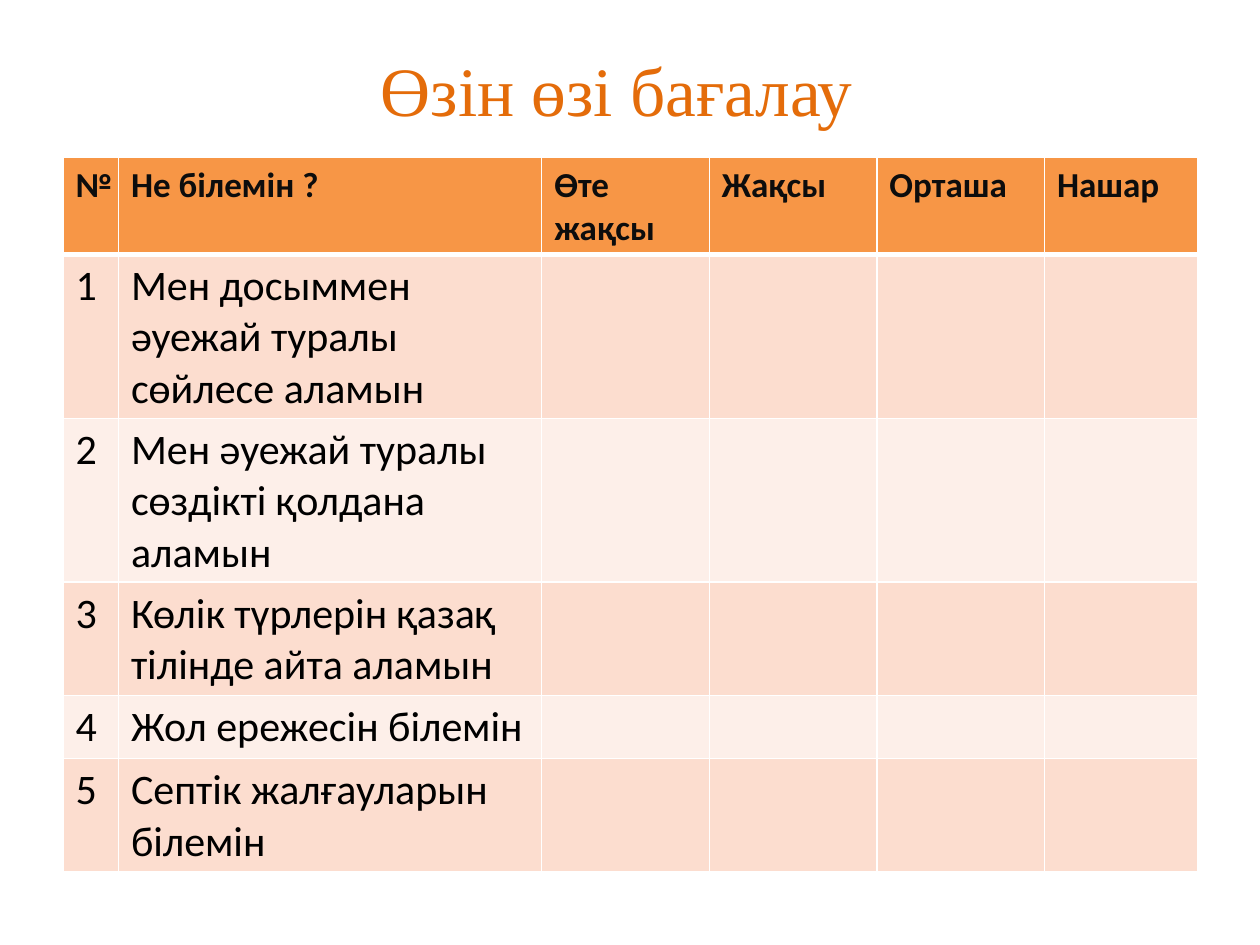
from pptx import Presentation
from pptx.dml.color import RGBColor
from pptx.enum.text import MSO_ANCHOR, PP_ALIGN
from pptx.oxml import parse_xml
from pptx.oxml.ns import nsdecls
from pptx.util import Inches, Pt


def add_run(paragraph, text, font, size, color, bold=False):
    run = paragraph.add_run()
    run.text = text
    run.font.name = font
    run.font.size = Pt(size)
    run.font.bold = bold
    run.font.color.rgb = RGBColor.from_string(color)


def add_border(cell, side, points, color="FFFFFF"):
    cell._tc.get_or_add_tcPr().append(parse_xml(
        f'<a:{side} {nsdecls("a")} w="{Pt(points)}"><a:solidFill>'
        f'<a:srgbClr val="{color}"/></a:solidFill></a:{side}>'))


presentation = Presentation()
presentation.slide_width = Inches(10)
presentation.slide_height = Inches(7.5)
slide = presentation.slides.add_slide(presentation.slide_layouts[6])

# Title
title = slide.shapes.add_textbox(Inches(1.02), Inches(0.31), Inches(7.75), Inches(0.79))
title.text_frame.word_wrap = True
title.text_frame.vertical_anchor = MSO_ANCHOR.MIDDLE
paragraph = title.text_frame.paragraphs[0]
paragraph.alignment = PP_ALIGN.CENTER
add_run(paragraph, "Өзін өзі бағалау", "Times New Roman", 39.6, "E46C0A")

# Self-assessment table: the grade columns stay empty for the pupil
headings = ["№", "Не білемін ?", "Өте жақсы", "Жақсы", "Орташа", "Нашар"]
skills = [
    "Мен досыммен әуежай туралы сөйлесе аламын",
    "Мен әуежай туралы сөздікті қолдана аламын",
    "Көлік түрлерін қазақ тілінде айта аламын",
    "Жол ережесін білемін",
    "Септік жалғауларын білемін",
]
rows = [headings] + [[str(number), skill, "", "", "", ""]
                     for number, skill in enumerate(skills, 1)]
column_widths = [0.44, 3.36, 1.33, 1.33, 1.33, 1.22]
row_heights = [0.77, 1.3, 1.3, 0.9, 0.5, 0.9]

table = slide.shapes.add_table(
    len(rows), len(headings), Inches(0.5), Inches(1.25),
    Inches(sum(column_widths)), Inches(sum(row_heights))).table
for column, width in zip(table.columns, column_widths):
    column.width = Inches(width)
for row, height in zip(table.rows, row_heights):
    row.height = Inches(height)

# Cells: orange header, then two alternating tints
for row_index, texts in enumerate(rows):
    is_header = row_index == 0
    fill = "F79646" if is_header else ("FDEFE9", "FCDDCF")[row_index % 2]
    for column_index, text in enumerate(texts):
        cell = table.cell(row_index, column_index)
        for side in ("lnL", "lnR", "lnT", "lnB"):
            thick = (is_header and side == "lnB") or (row_index == 1 and side == "lnT")
            add_border(cell, side, 3 if thick else 1)
        cell.fill.solid()
        cell.fill.fore_color.rgb = RGBColor.from_string(fill)
        if text:
            add_run(cell.text_frame.paragraphs[0], text, "Calibri",
                    20 if is_header else 24,
                    "0D0D0D" if is_header else "000000", is_header)

presentation.save("out.pptx")
